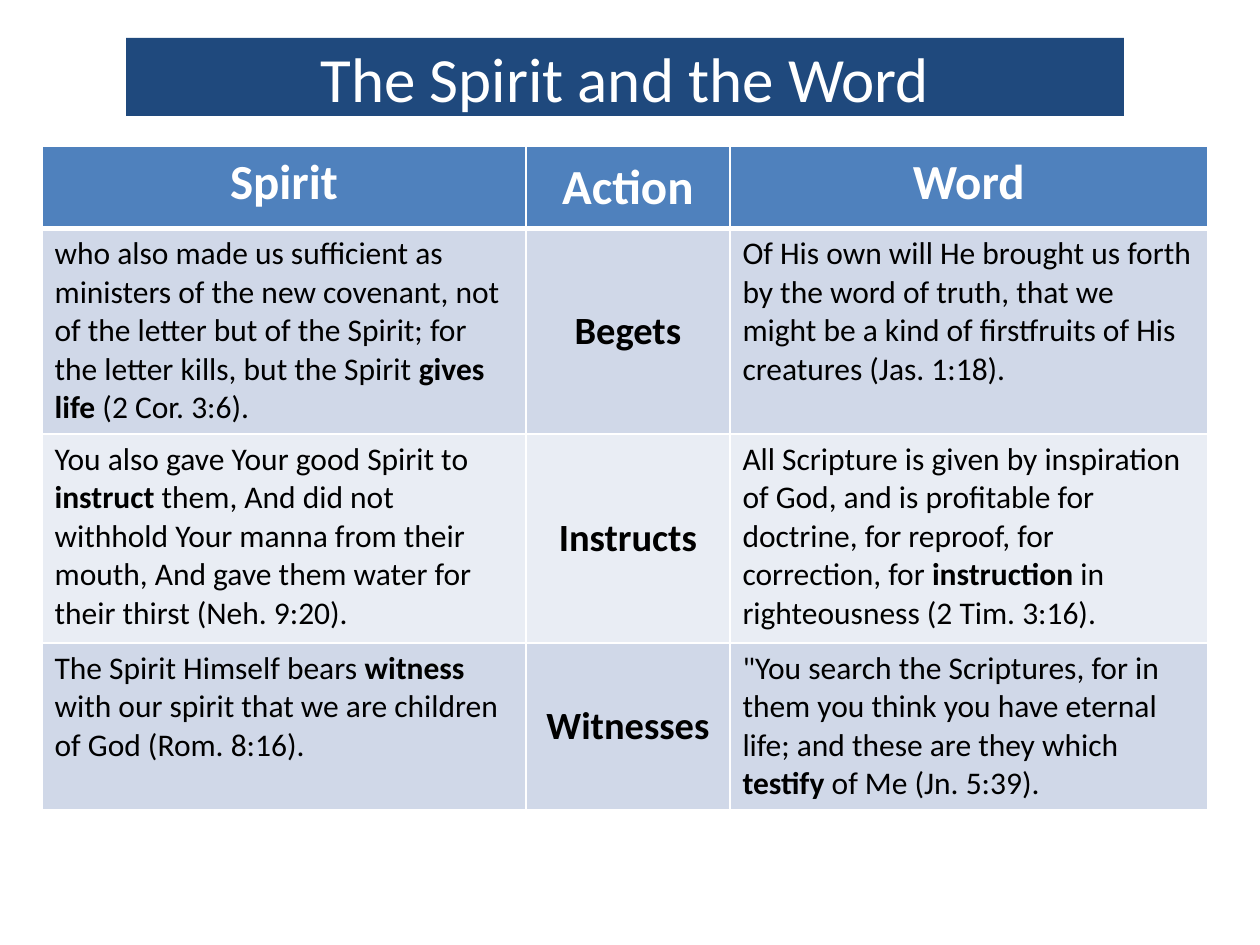
from dataclasses import dataclass

from lxml import etree
from pptx import Presentation
from pptx.dml.color import RGBColor
from pptx.enum.text import MSO_ANCHOR, PP_ALIGN
from pptx.oxml.ns import qn
from pptx.util import Pt

CENTER, LEFT = PP_ALIGN.CENTER, PP_ALIGN.LEFT
TOP, MIDDLE = MSO_ANCHOR.TOP, MSO_ANCHOR.MIDDLE
FONT = "Calibri"
WHITE, BLACK, NAVY, BLUE = "FFFFFF", "000000", "1F497D", "4F81BD"
BANDS = ("D0D8E8", "E9EDF4")
COLUMN_WIDTHS = (276.5, 116.6, 272.9)
ROW_HEIGHTS = (46.8, 117.4, 119.5, 95)


@dataclass
class Comparison:
    """One action with its passages; double asterisks enclose bold words."""

    spirit: str
    action: str
    word: str


COMPARISONS = (
    Comparison(
        "who also made us sufficient as ministers of the new covenant, not of the letter "
        "but of the Spirit; for the letter kills, but the Spirit **gives life **(2 Cor. 3:6).",
        "Begets",
        "Of His own will He brought us forth by the word of truth, that we might be "
        "a kind of firstfruits of His creatures (Jas. 1:18).",
    ),
    Comparison(
        "You also gave Your good Spirit to **instruct** them, And did not withhold Your manna "
        "from their mouth, And gave them water for their thirst (Neh. 9:20).",
        "Instructs",
        "All Scripture is given by inspiration of God, and is profitable for doctrine, "
        "for reproof, for correction, for **instruction** in righteousness (2 Tim. 3:16).",
    ),
    Comparison(
        "The Spirit Himself bears **witness** with our spirit that we are children of God "
        "(Rom. 8:16).",
        "Witnesses",
        '"You search the Scriptures, for in them you think you have eternal life; '
        "and these are they which **testify** of Me (Jn. 5:39).",
    ),
)


def color(value: str) -> RGBColor:
    """Turn a hex string into a colour."""
    return RGBColor.from_string(value)


def write(frame, text: str, *, size: float, ink: str = BLACK, bold: bool = False,
          align=LEFT) -> None:
    """Write one paragraph, setting the words between double asterisks in bold."""
    para = frame.paragraphs[0]
    para.alignment = align
    for index, part in enumerate(text.split("**")):
        span = para.add_run()
        span.text = part
        span.font.name = FONT
        span.font.size = Pt(size)
        span.font.bold = bold or index % 2 == 1
        span.font.color.rgb = color(ink)


def add_borders(cell, bottom: float) -> None:
    """Give a cell white borders, with the bottom one of the given width."""
    properties = cell._tc.get_or_add_tcPr()
    widths = {"a:lnL": 1, "a:lnR": 1, "a:lnT": 1, "a:lnB": bottom}
    for index, (tag, width) in enumerate(widths.items()):
        line = etree.Element(qn(tag), w=str(Pt(width)))
        fill = etree.SubElement(line, qn("a:solidFill"))
        etree.SubElement(fill, qn("a:srgbClr"), val=WHITE)
        properties.insert(index, line)


def fill_cell(cell, text: str, *, fill: str, anchor=TOP, bottom: float = 1,
              **text_format) -> None:
    """Fill, border and write one table cell."""
    cell.fill.solid()
    cell.fill.fore_color.rgb = color(fill)
    cell.vertical_anchor = anchor
    add_borders(cell, bottom)
    write(cell.text_frame, text, **text_format)


def add_title(page) -> None:
    """Draw the title band."""
    box = page.shapes.add_textbox(Pt(72), Pt(21.6), Pt(570.2), Pt(44.6))
    box.fill.solid()
    box.fill.fore_color.rgb = color(NAVY)
    box.text_frame.word_wrap = True
    box.text_frame.vertical_anchor = MIDDLE
    write(box.text_frame, "The Spirit and the Word", size=36, ink=WHITE, align=CENTER)


def add_comparison_table(page) -> None:
    """Draw the table of actions shared by the Spirit and the Word."""
    table = page.shapes.add_table(
        len(ROW_HEIGHTS), len(COLUMN_WIDTHS), Pt(24), Pt(83.8),
        Pt(sum(COLUMN_WIDTHS)), Pt(sum(ROW_HEIGHTS))).table
    for column, width in zip(table.columns, COLUMN_WIDTHS):
        column.width = Pt(width)
    for row, height in zip(table.rows, ROW_HEIGHTS):
        row.height = Pt(height)
    for index, heading in enumerate(("Spirit", "Action", "Word")):
        fill_cell(table.cell(0, index), heading, fill=BLUE, bottom=3, size=28, ink=WHITE,
                  bold=True, align=CENTER, anchor=MIDDLE if index == 1 else TOP)
    for index, item in enumerate(COMPARISONS):
        band = BANDS[index % 2]
        spirit, action, word = table.rows[index + 1].cells
        fill_cell(spirit, item.spirit, fill=band, size=18)
        fill_cell(action, item.action, fill=band, size=22, bold=True, align=CENTER,
                  anchor=MIDDLE)
        fill_cell(word, item.word, fill=band, size=18)


def main() -> None:
    """Build the deck and save it."""
    deck = Presentation()
    deck.slide_width, deck.slide_height = Pt(720), Pt(540)
    page = deck.slides.add_slide(deck.slide_layouts[6])
    add_title(page)
    add_comparison_table(page)
    deck.save("out.pptx")


if __name__ == "__main__":
    main()
